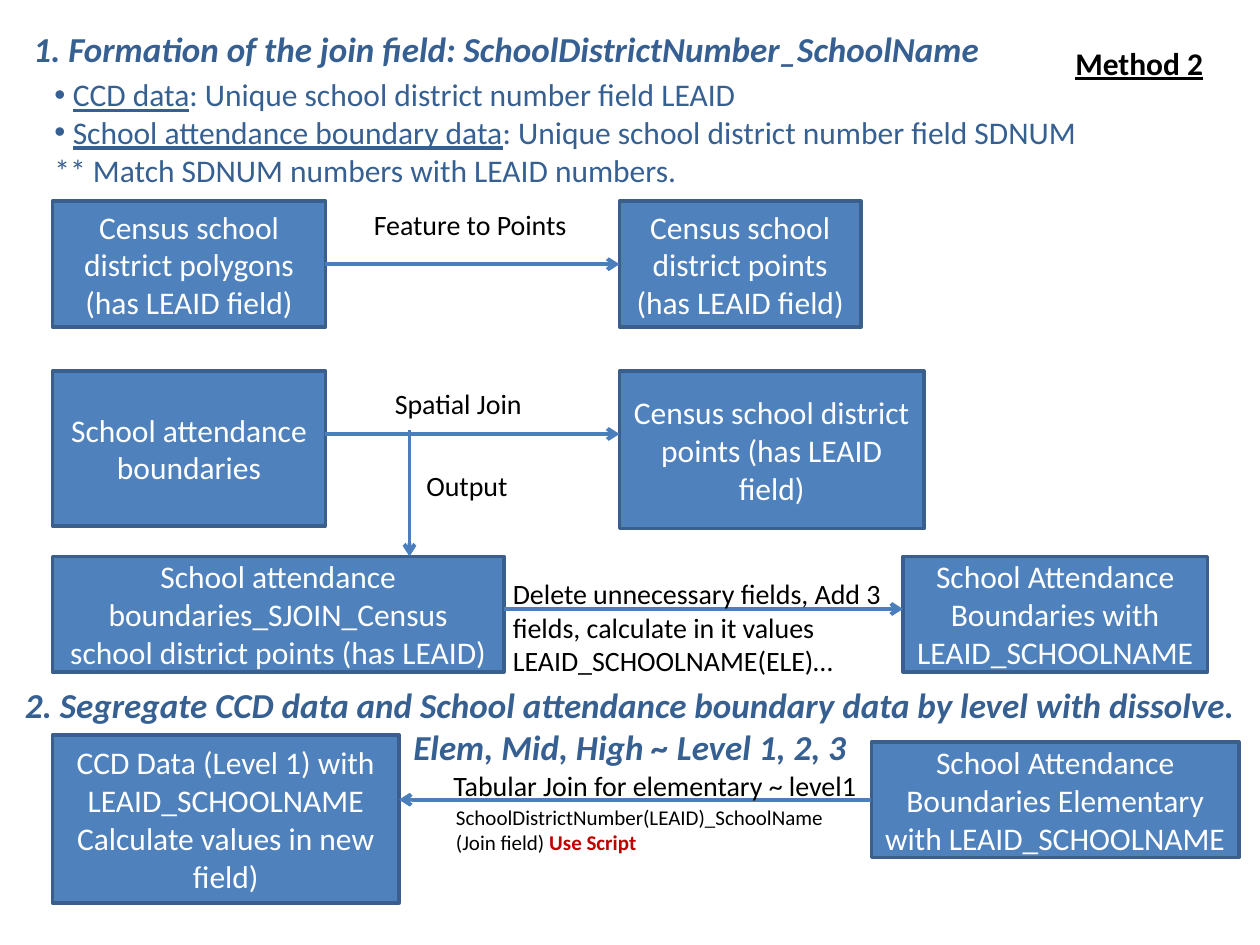
"""Builds the Method 2 slide: a flow of school boundary joins."""
from lxml.etree import SubElement
from pptx import Presentation
from pptx.dml.color import RGBColor
from pptx.enum.shapes import MSO_CONNECTOR, MSO_SHAPE
from pptx.enum.text import MSO_ANCHOR, MSO_AUTO_SIZE, PP_ALIGN
from pptx.oxml.ns import qn
from pptx.util import Pt

COLORS = {"fill": "4F81BD", "border": "3A5F8C", "arrow": "4B7EBC", "heading": "376092",
          "black": "000000", "white": "FFFFFF", "red": "C00000"}
FONT = "Calibri"
TOP, LEFT, BOTTOM, RIGHT = range(4)
INDENT = 21.6

TITLE = ("Method 2", (600, 12, 102, 48))
HEADINGS = [
    ("1. Formation of the join field: SchoolDistrictNumber_SchoolName",
     (12, 12, 612, 31.5), {}),
    ("2. Segregate CCD data and School attendance boundary data by level with dissolve. "
     "Elem, Mid, High ~ Level 1, 2, 3",
     (0, 390, 720, 49), {"align": PP_ALIGN.CENTER, "anchor": MSO_ANCHOR.MIDDLE}),
]
FIELDS = [
    [("CCD data", {"underline": True}), ": Unique school district number field LEAID"],
    [("School attendance boundary data", {"underline": True}),
     ": Unique school district number field SDNUM"],
    "** Match SDNUM numbers with LEAID numbers.",
]
FIELDS_AREA = (24, 39.5, 636, 72.7)
STEPS = {
    "polygons": ("Census school district polygons (has LEAID field)", (30, 115, 156, 72)),
    "points": ("Census school district points (has LEAID field)", (354, 115, 138, 72)),
    "attendance": ("School attendance boundaries", (30, 212, 156, 88.5)),
    "join points": ("Census school district points (has LEAID field)", (354, 212, 174, 90)),
    "joined": ("School attendance boundaries_SJOIN_Census school district points (has LEAID)",
               (30, 318, 258, 66)),
    "named": ("School Attendance Boundaries with LEAID_SCHOOLNAME", (516, 318, 174, 66)),
    "ccd": (["CCD Data (Level 1) with", "LEAID_SCHOOLNAME Calculate values in new field)"],
            (30, 420, 198, 96)),
    "elementary": ("School Attendance Boundaries Elementary with LEAID_SCHOOLNAME",
                   (498, 424, 210, 66)),
}
ARROWS = [
    ((186, 151, 354, 151), ("polygons", RIGHT), ("points", LEFT)),
    ((186, 248, 354, 248), None, None),
    ((234, 246, 234, 318), None, None),
    ((288, 348, 516, 348), None, None),
    ((498, 457, 228, 457), ("elementary", LEFT), None),
]
LABELS = [
    ("Feature to Points", (192, 115, 156, 26.6), {"inset": INDENT}),
    ("Spatial Join", (204, 217.5, 108, 26.6), {"inset": INDENT}),
    ("Output", (222, 264, 84, 26.6), {"inset": INDENT}),
    ("Delete unnecessary fields, Add 3 fields, calculate in it values "
     "LEAID_SCHOOLNAME(ELE)…", (286, 326, 258, 65.5), {}),
    ("Tabular Join for elementary ~ level1", (252, 435.5, 246, 26.6), {}),
    (["SchoolDistrictNumber(LEAID)_SchoolName",
      ["(Join field) ", ("Use Script", {"color": "red", "bold": True})]],
     (253.5, 456, 238, 36), {"size": 12}),
]


def color(name):
    return RGBColor.from_string(COLORS[name])


def write(shape, text, size=16, align=PP_ALIGN.LEFT, anchor=MSO_ANCHOR.TOP, inset=7.2, **style):
    """Fill a shape with paragraphs; each is a string or a list of spans."""
    frame = shape.text_frame
    frame.word_wrap = True
    frame.auto_size = MSO_AUTO_SIZE.NONE
    frame.vertical_anchor = anchor
    frame.margin_left = Pt(inset)
    for index, spans in enumerate([text] if isinstance(text, str) else text):
        para = frame.add_paragraph() if index else frame.paragraphs[0]
        para.alignment = align
        for part in [spans] if isinstance(spans, str) else spans:
            words, extra = (part, {}) if isinstance(part, str) else part
            look = {"color": "black", **style, **extra}
            span = para.add_run()
            span.text = words
            span.font.name = FONT
            span.font.size = Pt(size)
            span.font.color.rgb = color(look.pop("color"))
            for name, value in look.items():
                setattr(span.font, name, value)


def add_text(page, text, area, **style):
    box = page.shapes.add_textbox(*map(Pt, area))
    write(box, text, **style)
    return box


def add_step(page, text, area):
    box = page.shapes.add_shape(MSO_SHAPE.RECTANGLE, *map(Pt, area))
    box.shadow.inherit = False
    box.fill.solid()
    box.fill.fore_color.rgb = color("fill")
    box.line.color.rgb = color("border")
    box.line.width = Pt(2)
    write(box, text, size=18, color="white", align=PP_ALIGN.CENTER, anchor=MSO_ANCHOR.MIDDLE)
    return box


def add_arrow(page, ends, start, finish, boxes):
    arrow = page.shapes.add_connector(MSO_CONNECTOR.STRAIGHT, *map(Pt, ends))
    if start:
        arrow.begin_connect(boxes[start[0]], start[1])
    if finish:
        arrow.end_connect(boxes[finish[0]], finish[1])
    arrow.line.color.rgb = color("arrow")
    arrow.line.width = Pt(2.25)
    SubElement(arrow.line._get_or_add_ln(), qn("a:tailEnd"), type="arrow")
    SubElement(arrow._element.spPr, qn("a:effectLst"))


def add_bullet(para):
    properties = para._p.get_or_add_pPr()
    properties.set("marL", str(Pt(10.5)))
    properties.set("indent", str(-Pt(10.5)))
    SubElement(properties, qn("a:buFont"), typeface="Arial")
    SubElement(properties, qn("a:buChar"), char="•")


def main():
    deck = Presentation()
    deck.slide_width, deck.slide_height = Pt(720), Pt(540)
    page = deck.slides.add_slide(deck.slide_layouts[5])

    title = page.shapes.title
    text, area = TITLE
    title.left, title.top, title.width, title.height = map(Pt, area)
    write(title, text, size=18, align=PP_ALIGN.CENTER, anchor=MSO_ANCHOR.MIDDLE,
          bold=True, underline=True)

    boxes = {name: add_step(page, *step) for name, step in STEPS.items()}
    for arrow in ARROWS:
        add_arrow(page, *arrow, boxes)
    for text, area, style in HEADINGS:
        add_text(page, text, area, size=20, color="heading", bold=True, italic=True, **style)
    fields = add_text(page, FIELDS, FIELDS_AREA, size=18, color="heading")
    for para in fields.text_frame.paragraphs[:2]:
        add_bullet(para)
    for text, area, style in LABELS:
        add_text(page, text, area, **style)
    deck.save("out.pptx")


if __name__ == "__main__":
    main()
